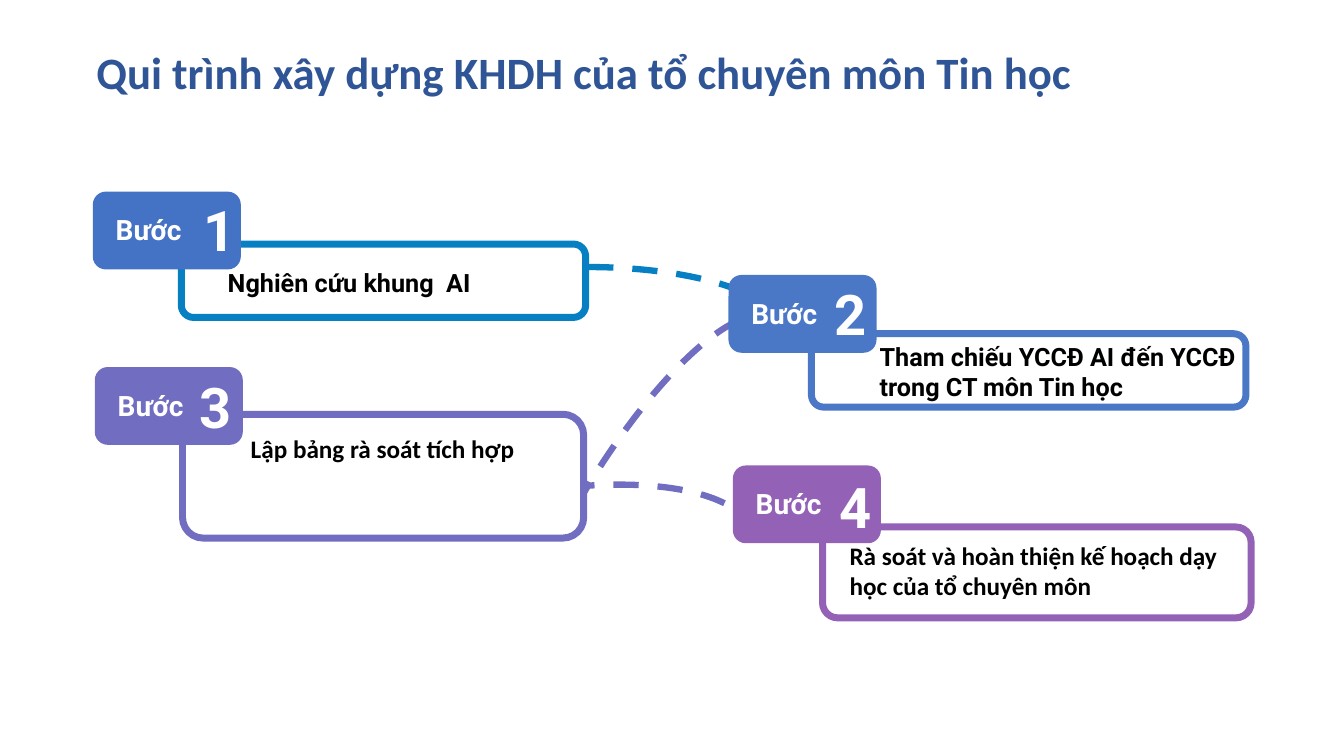
from typing import NamedTuple

import pptx
import pptx.dml.color
import pptx.enum.dml
import pptx.enum.shapes
import pptx.enum.text
import pptx.util

SHAPES = pptx.enum.shapes.MSO_SHAPE
ALIGN = pptx.enum.text.PP_ALIGN
ANCHOR = pptx.enum.text.MSO_ANCHOR


class Box(NamedTuple):
    """Left, top, width and height in centimetres."""
    left: float
    top: float
    width: float
    height: float


class Step(NamedTuple):
    number: str
    badge_at: tuple[float, float]
    number_at: tuple[float, float]
    card: Box
    badge_color: str
    card_color: str
    content: str
    content_box: Box
    content_font: str


class Link(NamedTuple):
    box: Box
    rotation: float
    color: str


BADGE_SIZE = (3.73, 1.96)
NUMBER_SIZE = (1.32, 1.96)
LABEL_SIZE = (2.77, 1.12)
LABEL_OFFSET = (0.11, 0.41)

STEPS = [
    Step("1", (2.34, 4.83), (4.88, 4.8), Box(4.57, 6.15, 10.19, 1.85),
         "4472C4", "0680C3", "Nghiên cứu khung  AI",
         Box(5.49, 6.6, 9.22, 1.02), "Roboto"),
    Step("2", (18.36, 6.93), (20.78, 6.91), Box(20.45, 8.41, 10.95, 1.85),
         "4A78C6", "4A78C6", "Tham chiếu YCCĐ AI đến YCCĐ trong CT môn Tin học",
         Box(21.92, 8.48, 11.1, 1.8), "Roboto"),
    Step("3", (2.39, 9.25), (4.78, 9.25), Box(4.6, 10.44, 10.11, 3.12),
         "716EC2", "716EC2", "Lập bảng rà soát tích hợp",
         Box(6.07, 10.8, 8.74, 1.02), "Calibri"),
    Step("4", (18.47, 11.73), (20.9, 11.79), Box(20.73, 13.28, 10.8, 2.29),
         "9362B7", "9362B7", "Rà soát và hoàn thiện kế hoạch dạy học của tổ chuyên môn",
         Box(21.16, 13.49, 10.24, 1.8), "Calibri"),
]

LINKS = [
    Link(Box(8.15, 12.4, 10.92, 4.09), 349.8, "716EC2"),
    Link(Box(9.7, 11.73, 13.06, 3.89), 300, "716EC2"),
    Link(Box(9.96, 6.73, 9.73, 3.12), 0, "0680C3"),
]


def rgb(color: str) -> pptx.dml.color.RGBColor:
    return pptx.dml.color.RGBColor.from_string(color)


def lengths(box: Box) -> list[pptx.util.Length]:
    return [pptx.util.Cm(value) for value in box]


def add_outline(slide, kind, box: Box, fill: str | None,
                line: str | None, width: float = 5):
    outline = slide.shapes.add_shape(kind, *lengths(box))
    outline.shadow.inherit = False
    if fill:
        outline.fill.solid()
        outline.fill.fore_color.rgb = rgb(fill)
    else:
        outline.fill.background()
    if line:
        outline.line.color.rgb = rgb(line)
        outline.line.width = pptx.util.Pt(width)
    else:
        outline.line.fill.background()
    return outline


def add_text(slide, box: Box, text: str, size: float, font: str, color: str,
             align=ALIGN.LEFT, anchor=ANCHOR.TOP, wrap: bool = True):
    frame = slide.shapes.add_textbox(*lengths(box)).text_frame
    frame.word_wrap = wrap
    frame.vertical_anchor = anchor
    paragraph = frame.paragraphs[0]
    paragraph.text = text
    paragraph.alignment = align
    paragraph.font.name = font
    paragraph.font.size = pptx.util.Pt(size)
    paragraph.font.bold = True
    paragraph.font.color.rgb = rgb(color)
    return paragraph


def add_link(slide, link: Link) -> None:
    arc = add_outline(slide, SHAPES.ARC, link.box, None, link.color, 4.5)
    arc.rotation = link.rotation
    arc.line.dash_style = pptx.enum.dml.MSO_LINE.DASH


def add_step(slide, step: Step) -> None:
    left, top = step.badge_at
    label_box = Box(left + LABEL_OFFSET[0], top + LABEL_OFFSET[1], *LABEL_SIZE)
    add_outline(slide, SHAPES.ROUNDED_RECTANGLE, step.card, "FFFFFF", step.card_color)
    add_outline(slide, SHAPES.ROUNDED_RECTANGLE, Box(left, top, *BADGE_SIZE),
                step.badge_color, None)
    add_text(slide, label_box, "Bước ", 20, "Roboto", "FFFFFF", ALIGN.CENTER)
    add_text(slide, Box(*step.number_at, *NUMBER_SIZE), step.number, 40,
             "Roboto", "FFFFFF", ALIGN.CENTER, wrap=False)
    add_text(slide, step.content_box, step.content, 18, step.content_font, "000000")


def main() -> None:
    deck = pptx.Presentation()
    deck.slide_width = pptx.util.Cm(33.87)
    deck.slide_height = pptx.util.Cm(19.05)
    slide = deck.slides.add_slide(deck.slide_layouts[6])

    # Dashed arcs behind the steps
    for link in LINKS:
        add_link(slide, link)

    # Title
    title = add_text(slide, Box(2.18, 0.05, 29.21, 3.68),
                     "Qui trình xây dựng KHDH của tổ chuyên môn Tin học",
                     32, "Calibri", "2F5597", anchor=ANCHOR.MIDDLE)
    title.line_spacing = 0.9

    # Steps: card, badge and texts
    for step in STEPS:
        add_step(slide, step)

    deck.save("out.pptx")


if __name__ == "__main__":
    main()
